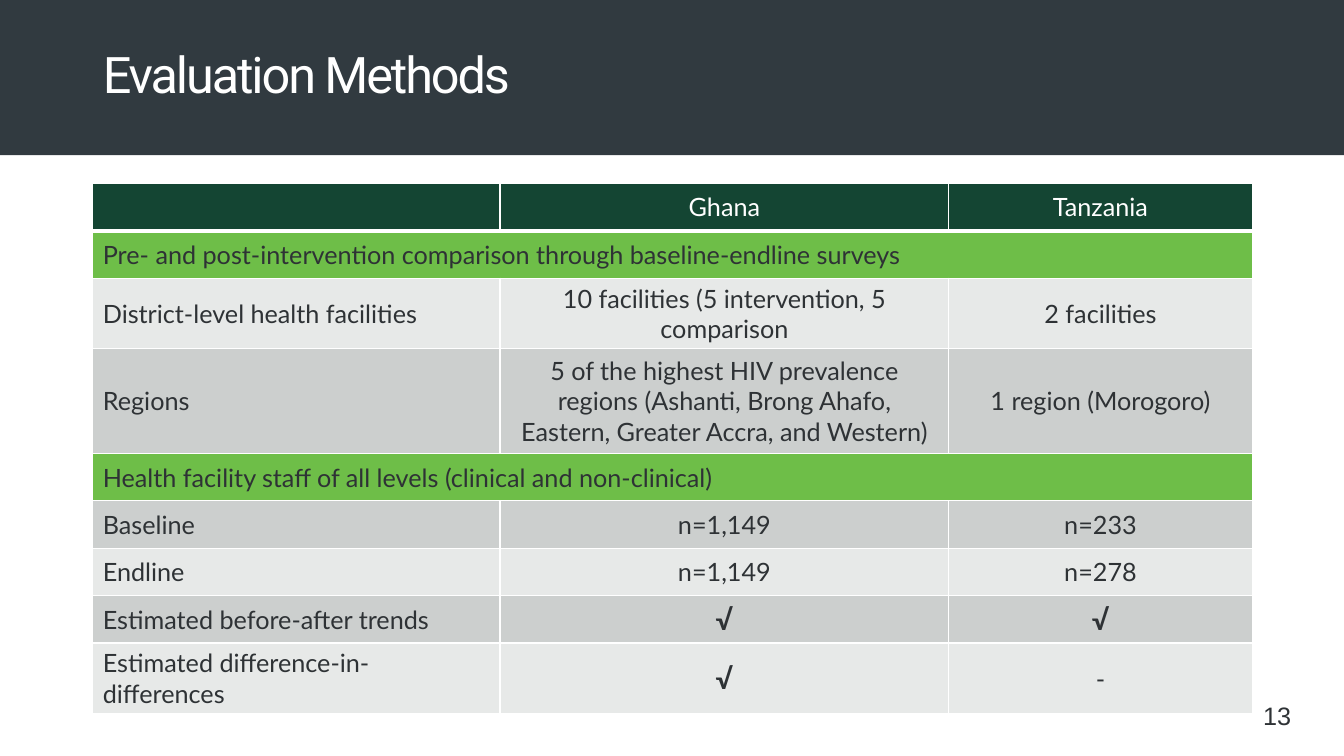
import pptx
import pptx.util
import pptx.dml.color
import pptx.enum.shapes
import pptx.enum.text
import pptx.oxml
import pptx.oxml.ns
from dataclasses import dataclass

Inches, Pt = pptx.util.Inches, pptx.util.Pt
ALIGN = pptx.enum.text.PP_ALIGN
MIDDLE = pptx.enum.text.MSO_ANCHOR.MIDDLE


@dataclass(frozen=True)
class Theme:
    band: str = "313A40"
    header: str = "144533"
    section: str = "6EBE48"
    light: str = "E7E9E8"
    dark: str = "CCCFCE"
    ink: str = "2E3235"
    white: str = "FFFFFF"
    title_font: str = "Roboto"
    body_font: str = "Lato"
    number_font: str = "Arial"
    title_size: int = 36
    body_size: int = 18
    check_size: int = 20


THEME = Theme()
SLIDE_W, SLIDE_H = 13.33, 7.5
MARGIN, CONTENT_W = 0.92, 11.5
BAND_H = 1.54
COLUMNS = (4.04, 4.45, 3.01)
ROW_H, TALL_ROW_H = 0.47, 1.04
CHECK = "√"

# Single-entry rows are section headings that span the table
ROWS = (
    ("", "Ghana", "Tanzania"),
    ("Pre- and post-intervention comparison through baseline-endline surveys",),
    ("District-level health facilities",
     "10 facilities (5 intervention, 5 comparison", "2 facilities"),
    ("Regions",
     "5 of the highest HIV prevalence regions (Ashanti, Brong Ahafo, "
     "Eastern, Greater Accra, and Western)", "1 region (Morogoro)"),
    ("Health facility staff of all levels (clinical and non-clinical)",),
    ("Baseline", "n=1,149", "n=233"),
    ("Endline", "n=1,149", "n=278"),
    ("Estimated before-after trends", CHECK, CHECK),
    ("Estimated difference-in-differences", CHECK, "-"),
)


def rgb(color):
    return pptx.dml.color.RGBColor.from_string(color)


def write(tf, text, font, size, color, align=ALIGN.LEFT, bold=False):
    tf.text = text
    p = tf.paragraphs[0]
    p.alignment = align
    p.font.size = Pt(size)
    for r in p.runs:
        r.font.name, r.font.size, r.font.bold = font, Pt(size), bold
        r.font.color.rgb = rgb(color)
    return p


def set_borders(cell, bottom):
    tc_pr = cell._tc.get_or_add_tcPr()
    for side, width in (("L", 1), ("R", 1), ("T", 1), ("B", bottom)):
        tc_pr.append(pptx.oxml.parse_xml(
            f'<a:ln{side} {pptx.oxml.ns.nsdecls("a")} w="{Pt(width)}">'
            f'<a:solidFill><a:srgbClr val="{THEME.white}"/></a:solidFill>'
            f'</a:ln{side}>'))


def add_title_band(s, x, y, w, h):
    # Full-width band behind the title
    band = s.shapes.add_shape(pptx.enum.shapes.MSO_SHAPE.RECTANGLE,
                              Inches(x), Inches(y), Inches(w), Inches(h))
    band.shadow.inherit = False
    band.fill.solid()
    band.fill.fore_color.rgb = rgb(THEME.band)
    band.line.fill.background()

    # Title, in front of the band
    title = s.shapes.title
    title.element.addprevious(band.element)
    title.left, title.top = Inches(x + MARGIN), Inches(y)
    title.width, title.height = Inches(CONTENT_W), Inches(h)
    tf = title.text_frame
    tf.auto_size = pptx.enum.text.MSO_AUTO_SIZE.NONE
    tf.vertical_anchor = MIDDLE
    p = write(tf, "Evaluation Methods", THEME.title_font,
              THEME.title_size, THEME.white)
    p.line_spacing = 0.9
    p.runs[0].font._element.set("spc", "-150")


def add_methods_table(s, x, y, w):
    heights = [TALL_ROW_H if row[0] == "Regions" else ROW_H for row in ROWS]
    table = s.shapes.add_table(len(ROWS), len(COLUMNS), Inches(x), Inches(y),
                               Inches(w), Inches(sum(heights))).table
    for column, width in zip(table.columns, COLUMNS):
        column.width = Inches(width)
    for i, row in enumerate(ROWS):
        table.rows[i].height = Inches(heights[i])
        is_section = len(row) == 1
        if i == 0:
            fill = THEME.header
        elif is_section:
            fill = THEME.section
        else:
            fill = THEME.dark if i % 2 else THEME.light

        for j in range(len(COLUMNS)):
            cell = table.cell(i, j)
            set_borders(cell, 3 if i == 0 else 1)
            cell.fill.solid()
            cell.fill.fore_color.rgb = rgb(fill)
            cell.vertical_anchor = MIDDLE
        if is_section:
            table.cell(i, 0).merge(table.cell(i, len(COLUMNS) - 1))

        for j, text in enumerate(row):
            is_check = text == CHECK
            write(table.cell(i, j).text_frame, text, THEME.body_font,
                  THEME.check_size if is_check else THEME.body_size,
                  THEME.white if i == 0 else THEME.ink,
                  ALIGN.CENTER if j else ALIGN.LEFT, is_check)


def add_page_number(s, x, y, w, h):
    tf = s.shapes.add_textbox(Inches(x), Inches(y),
                              Inches(w), Inches(h)).text_frame
    tf.word_wrap = True
    write(tf, "13", THEME.number_font, THEME.body_size, THEME.ink)


def main():
    prs = pptx.Presentation()
    prs.slide_width, prs.slide_height = Inches(SLIDE_W), Inches(SLIDE_H)
    s = prs.slides.add_slide(prs.slide_layouts.get_by_name("Title Only"))
    add_title_band(s, 0, 0, SLIDE_W, BAND_H)
    add_methods_table(s, MARGIN, BAND_H + 0.28, CONTENT_W)
    add_page_number(s, SLIDE_W - 0.9, SLIDE_H - 0.6, 0.9, 0.4)
    prs.save("out.pptx")


if __name__ == "__main__":
    main()
